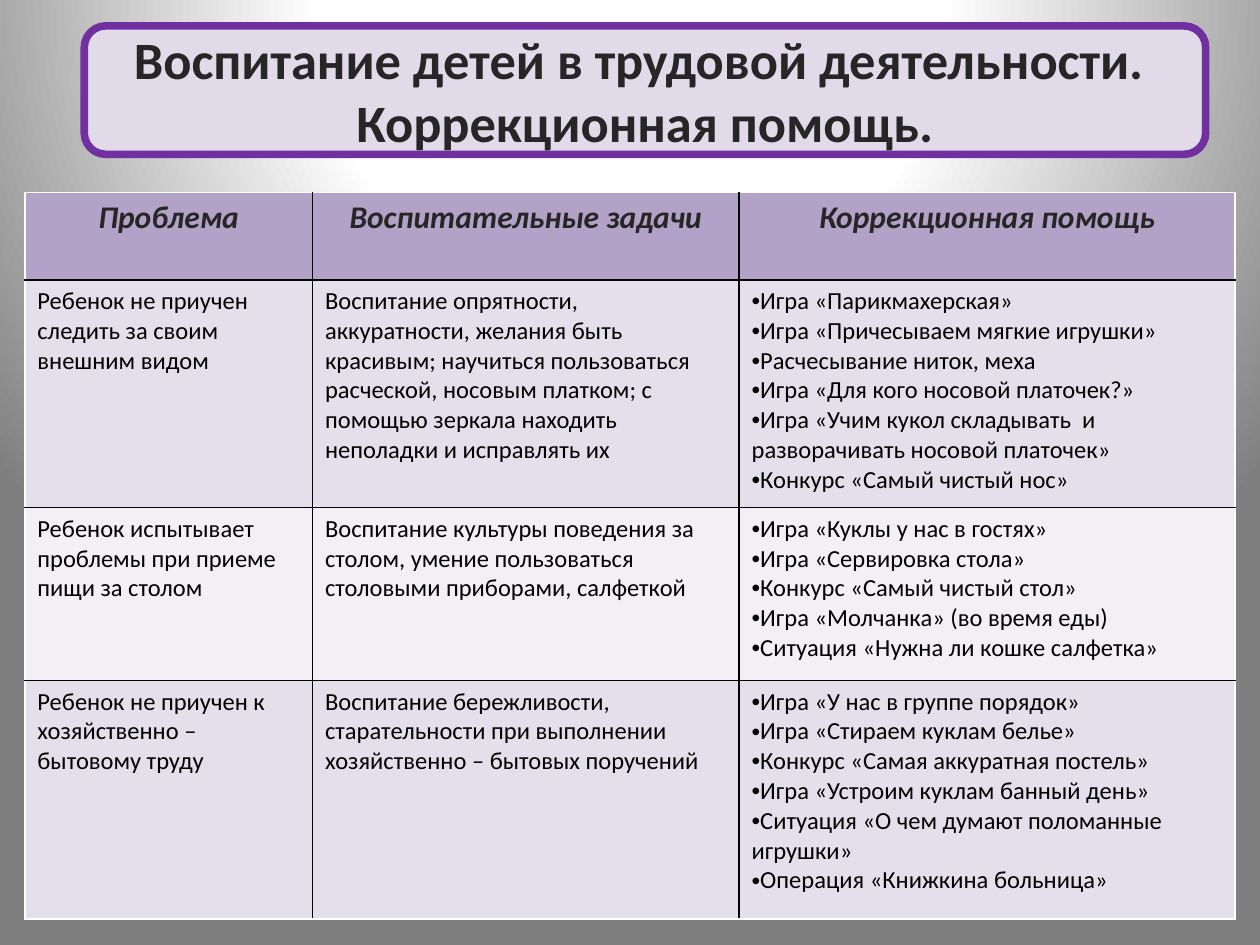
"""Build the slide on raising children through work activities."""
import dataclasses
import typing

import lxml.etree
import pptx
import pptx.dml.color
import pptx.enum.shapes
import pptx.enum.text
import pptx.oxml
import pptx.oxml.ns
import pptx.util

Pt = pptx.util.Pt
qn = pptx.oxml.ns.qn
ALIGN = pptx.enum.text.PP_ALIGN

COLORS = {
    "ink": "262626",
    "text": "000000",
    "title_fill": "E0DAE9",
    "title_line": "7030A0",
    "header": "B2A2C7",
    "band_dark": "E4E0EB",
    "band_light": "F2F0F5",
    "outer": "FFFFFF",
    "inner": "000000",
}
BACKGROUND_STOPS = [(0, "FFFFFF"), (40, "FEFEFE"), (100, "7F7F7F")]
COLUMN_WIDTHS = [164.4, 243.8, 283.5]
TITLE_BOX = {"left": Pt(48.2), "top": Pt(14.8), "width": Pt(640.8), "height": Pt(73.4)}

TITLE_FONT = {"name": "Calibri", "size": Pt(30), "bold": True}
HEADER_FONT = {"name": "Calibri", "size": Pt(18), "bold": True, "italic": True}
BODY_FONT = {"name": "Calibri", "size": Pt(14), "bold": False, "italic": False}


@dataclasses.dataclass
class Row:
    """One table row: its problem, its goals and its list of activities."""
    height: float
    fill: str
    problem: str
    goals: str
    activities: list[str]


HEADER = Row(49.8, "header", "Проблема", "Воспитательные задачи", ["Коррекционная помощь"])
ROWS = [
    Row(130.2, "band_dark", "Ребенок не приучен следить за своим внешним видом",
        "Воспитание опрятности, аккуратности, желания быть красивым; научиться пользоваться "
        "расческой, носовым платком; с помощью зеркала находить неполадки и исправлять их",
        ["Игра «Парикмахерская»", "Игра «Причесываем мягкие игрушки»",
         "Расчесывание ниток, меха", "Игра «Для кого носовой платочек?»",
         "Игра «Учим кукол складывать  и разворачивать носовой платочек»",
         "Конкурс «Самый чистый нос»"]),
    Row(98.8, "band_light", "Ребенок испытывает проблемы при приеме пищи за столом",
        "Воспитание культуры поведения за столом, умение пользоваться столовыми приборами, "
        "салфеткой",
        ["Игра «Куклы у нас в гостях»", "Игра «Сервировка стола»",
         "Конкурс «Самый чистый стол»", "Игра «Молчанка» (во время еды)",
         "Ситуация «Нужна ли кошке салфетка»"]),
    Row(136.2, "band_dark", "Ребенок не приучен к хозяйственно – бытовому труду",
        "Воспитание бережливости, старательности при выполнении хозяйственно – бытовых "
        "поручений",
        ["Игра «У нас в группе порядок»", "Игра «Стираем куклам белье»",
         "Конкурс «Самая аккуратная постель»", "Игра «Устроим куклам банный день»",
         "Ситуация «О чем думают поломанные игрушки»", "Операция «Книжкина больница»"]),
]


def rgb(name: str) -> pptx.dml.color.RGBColor:
    """Return the named colour."""
    return pptx.dml.color.RGBColor.from_string(COLORS[name])


def apply_format(target: typing.Any, values: dict[str, typing.Any]) -> None:
    """Set each format value on the target."""
    for name, value in values.items():
        setattr(target, name, value)


def write_lines(frame: typing.Any, lines: list[str], font: dict[str, typing.Any],
                color: str, alignment: ALIGN, bulleted: bool = False) -> None:
    """Write one formatted paragraph per line."""
    for index, line in enumerate(lines):
        paragraph = frame.add_paragraph() if index else frame.paragraphs[0]
        paragraph.alignment = alignment
        run = paragraph.add_run()
        run.text = line
        apply_format(run.font, font)
        run.font.color.rgb = rgb(color)
        if bulleted:
            properties = paragraph._p.get_or_add_pPr()
            properties.set("marL", "0")
            properties.set("indent", "0")
            lxml.etree.SubElement(properties, qn("a:buFont"), typeface="Arial")
            lxml.etree.SubElement(properties, qn("a:buChar"), char="•")


def paint_background(slide: typing.Any) -> None:
    """Fill the background with a radial gradient."""
    slide.background.fill.solid()
    solid = slide._element.find(".//" + qn("p:bgPr")).find(qn("a:solidFill"))
    stops = "".join(f'<a:gs pos="{position * 1000}"><a:srgbClr val="{color}"/></a:gs>'
                    for position, color in BACKGROUND_STOPS)
    gradient = pptx.oxml.parse_xml(
        f'<a:gradFill {pptx.oxml.ns.nsdecls("a")} rotWithShape="1"><a:gsLst>{stops}</a:gsLst>'
        '<a:path path="circle"><a:fillToRect l="50000" t="-80000" r="50000" b="180000"/>'
        '</a:path></a:gradFill>')
    solid.getparent().replace(solid, gradient)


def add_title_panel(slide: typing.Any) -> None:
    """Add the rounded panel and place it behind the title."""
    panel = slide.shapes.add_shape(
        pptx.enum.shapes.MSO_SHAPE.ROUNDED_RECTANGLE, *TITLE_BOX.values())
    panel.shadow.inherit = False
    panel.fill.solid()
    panel.fill.fore_color.rgb = rgb("title_fill")
    panel.line.color.rgb = rgb("title_line")
    panel.line.width = Pt(4.33)
    slide.shapes.title._element.addprevious(panel._element)


def format_title(title: typing.Any) -> None:
    """Place the title over its panel and write it."""
    apply_format(title, TITLE_BOX)
    apply_format(title.text_frame, {
        "word_wrap": True,
        "auto_size": pptx.enum.text.MSO_AUTO_SIZE.NONE,
        "vertical_anchor": pptx.enum.text.MSO_ANCHOR.MIDDLE,
    })
    write_lines(title.text_frame,
                ["Воспитание детей в трудовой деятельности. ", "Коррекционная помощь."],
                TITLE_FONT, "ink", ALIGN.CENTER)


def format_cell(cell: typing.Any, fill: str, outer_edges: dict[str, bool]) -> None:
    """Draw the four borders of a cell and fill it."""
    properties = cell._tc.get_or_add_tcPr()
    for edge, is_outer in outer_edges.items():
        line = lxml.etree.SubElement(properties, qn(f"a:ln{edge}"), w=str(Pt(1)))
        solid = lxml.etree.SubElement(line, qn("a:solidFill"))
        color = COLORS["outer" if is_outer else "inner"]
        lxml.etree.SubElement(solid, qn("a:srgbClr"), val=color)
    cell.fill.solid()
    cell.fill.fore_color.rgb = rgb(fill)


def add_problem_table(slide: typing.Any) -> None:
    """Add the table of problems, goals and corrective help."""
    rows = [HEADER, *ROWS]
    last_row, last_column = len(rows) - 1, len(COLUMN_WIDTHS) - 1
    table = slide.shapes.add_table(
        len(rows), len(COLUMN_WIDTHS), Pt(14.17), Pt(110.1),
        Pt(sum(COLUMN_WIDTHS)), Pt(sum(row.height for row in rows))).table
    for column, width in zip(table.columns, COLUMN_WIDTHS):
        column.width = Pt(width)
    for row_index, row in enumerate(rows):
        table.rows[row_index].height = Pt(row.height)
        is_header = row is HEADER
        font, color, alignment = ((HEADER_FONT, "ink", ALIGN.CENTER) if is_header
                                  else (BODY_FONT, "text", ALIGN.LEFT))
        for column_index, lines in enumerate([[row.problem], [row.goals], row.activities]):
            cell = table.cell(row_index, column_index)
            format_cell(cell, row.fill, {
                "L": column_index == 0, "R": column_index == last_column,
                "T": row_index == 0, "B": row_index == last_row})
            bulleted = column_index == last_column and not is_header
            write_lines(cell.text_frame, lines, font, color, alignment, bulleted)


def main() -> None:
    """Build and save the presentation."""
    presentation = pptx.Presentation()
    apply_format(presentation, {"slide_width": Pt(720), "slide_height": Pt(540)})
    slide = presentation.slides.add_slide(presentation.slide_layouts[5])
    paint_background(slide)
    add_title_panel(slide)
    format_title(slide.shapes.title)
    add_problem_table(slide)
    presentation.save("out.pptx")


if __name__ == "__main__":
    main()
